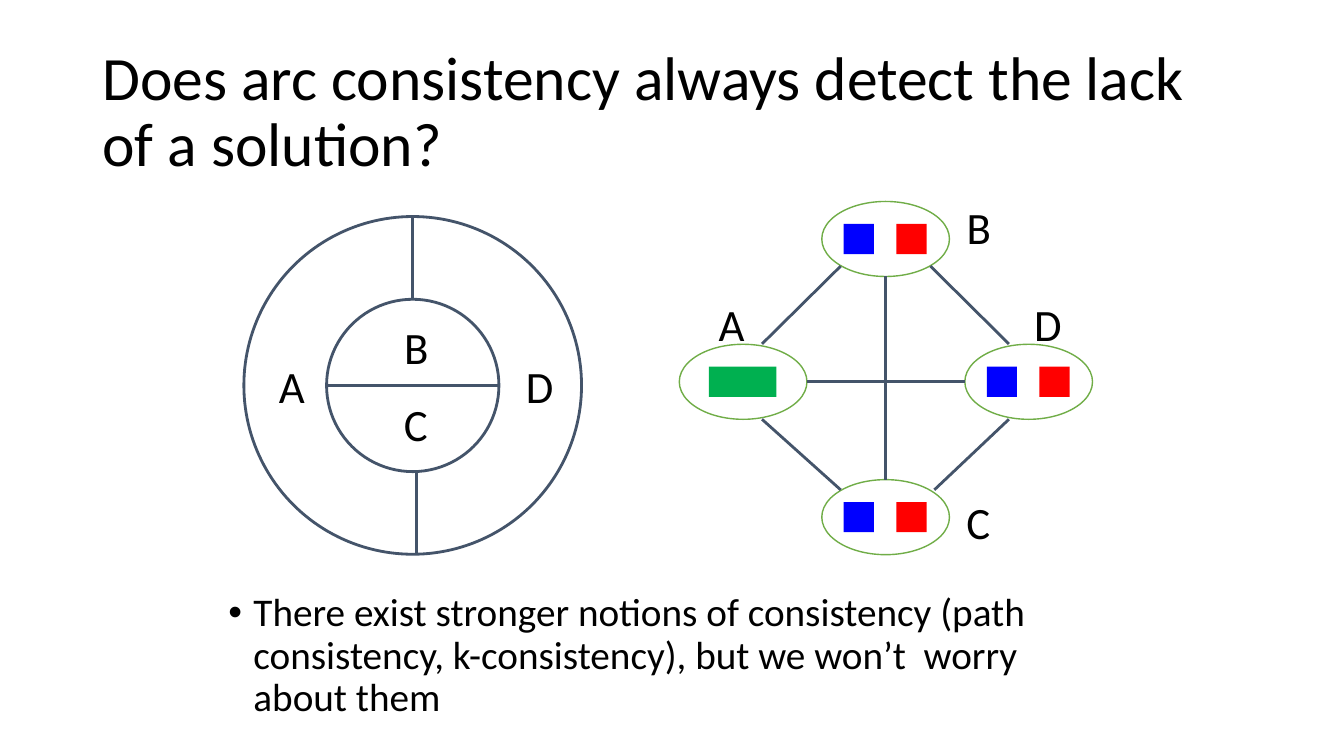
from lxml.etree import SubElement as Sub
from pptx import Presentation
from pptx.dml.color import RGBColor as Rgb
from pptx.enum.shapes import MSO_CONNECTOR as Conn, MSO_SHAPE as Kind
from pptx.enum.text import MSO_ANCHOR as Anchor, MSO_AUTO_SIZE as Auto
from pptx.oxml.ns import qn
from pptx.util import Pt

THEME = {
    "font": "Calibri", "title": 44, "body": 28, "label": 32,
    "text": "000000", "edge": "44546A", "ring": "70AD47", "node": "FFFFFF",
    "green": "00B050", "blue": "0000FF", "red": "FF0000",
}

deck = Presentation()
deck.slide_width, deck.slide_height = Pt(960), Pt(540)
slide = deck.slides.add_slide(deck.slide_layouts[5])
shapes = slide.shapes


def write(box, text, size="label", wrap=True, bullet=False, space=None):
    frame = box.text_frame
    frame.word_wrap = wrap
    frame.auto_size = Auto.NONE if wrap else Auto.SHAPE_TO_FIT_TEXT
    frame.text = text
    para = frame.paragraphs[0]
    if bullet:
        props = para._p.get_or_add_pPr()
        props.set("marL", str(Pt(18)))
        props.set("indent", str(Pt(-18)))
        Sub(props, qn("a:buFont")).set("typeface", "Arial")
        Sub(props, qn("a:buChar")).set("char", "•")
    if space:
        para.line_spacing = space
    font = para.runs[0].font
    font.name, font.size = THEME["font"], Pt(THEME[size])
    font.color.rgb = Rgb.from_string(THEME["text"])


def draw(kind, x, y, w, h, fill=None, line=None, width=2):
    """Draw a shape centred on x, y."""
    shape = shapes.add_shape(kind, Pt(x - w / 2), Pt(y - h / 2), Pt(w), Pt(h))
    shape.shadow.inherit = False
    if fill:
        shape.fill.solid()
        shape.fill.fore_color.rgb = Rgb.from_string(THEME[fill])
    else:
        shape.fill.background()
    if line:
        shape.line.color.rgb = Rgb.from_string(THEME[line])
        shape.line.width = Pt(width)
    else:
        shape.line.fill.background()


# Title and closing remark
title = shapes.title
title.left, title.top, title.width, title.height = Pt(66), Pt(28.8), Pt(828), Pt(104.4)
write(title, "Does arc consistency always detect the lack of a solution?",
      size="title", space=0.9)
title.text_frame.vertical_anchor = Anchor.MIDDLE
title.text_frame.paragraphs[0].alignment = 1

note = shapes.add_textbox(Pt(156), Pt(420), Pt(648), Pt(113.8))
write(note, "There exist stronger notions of consistency (path consistency, "
      "k-consistency), but we won’t  worry about them",
      size="body", bullet=True, space=0.9)

# Map: two rings
for size in (241.2, 123.1):
    draw(Kind.OVAL, 294.8, 275.3, size, size, line="edge")

# Graph: one oval per region, holding its remaining colours
nodes = {
    "A": (530.8, 272.7, ["green"]),
    "D": (734.8, 272.7, ["blue", "red"]),
    "B": (632.6, 170.7, ["blue", "red"]),
    "C": (632.6, 369.4, ["blue", "red"]),
}
for x, y, hues in nodes.values():
    draw(Kind.OVAL, x, y, 91.2, 53.6, fill="node", line="ring", width=1)
    side = 48.2 if len(hues) == 1 else 21.6
    for i, hue in enumerate(hues):
        draw(Kind.RECTANGLE, x - 0.3 + 37.6 * (i - (len(hues) - 1) / 2), y,
             side, 21.6, fill=hue)

# Borders of the map, then edges of the graph
lines = [
    (233.3, 275.3, 356.4, 275.3),
    (294.6, 154.8, 294.6, 213.8),
    (297.4, 337, 297.4, 396),
    (632.6, 197.5, 632.6, 342.6),
    (576.4, 272.7, 689.2, 272.7),
    (600.5, 190.1, 544.3, 245.7),
    (720.7, 299.5, 667.4, 349.9),
    (544.3, 299.5, 600.5, 349.9),
    (664.6, 190.1, 720.7, 245.7),
]
for ends in lines:
    edge = shapes.add_connector(Conn.STRAIGHT, *map(Pt, ends))
    edge.line.color.rgb = Rgb.from_string(THEME["edge"])
    edge.line.width = Pt(2)
    Sub(edge._element.spPr, qn("a:effectLst"))

# Letters of the map, then of the graph
wide = {"A": 33.1, "B": 32.4, "C": 31.7, "D": 34.6}
marks = [
    ("A", 192.2, 252.7), ("B", 281.5, 224.6), ("C", 281.5, 280.1), ("D", 368.6, 252.7),
    ("A", 506.2, 208.1), ("B", 683.3, 139), ("C", 683.3, 349.9), ("D", 731.5, 208.1),
]
for name, x, y in marks:
    label = shapes.add_textbox(Pt(x), Pt(y), Pt(wide[name]), Pt(46.1))
    write(label, name, wrap=False)

deck.save("out.pptx")
